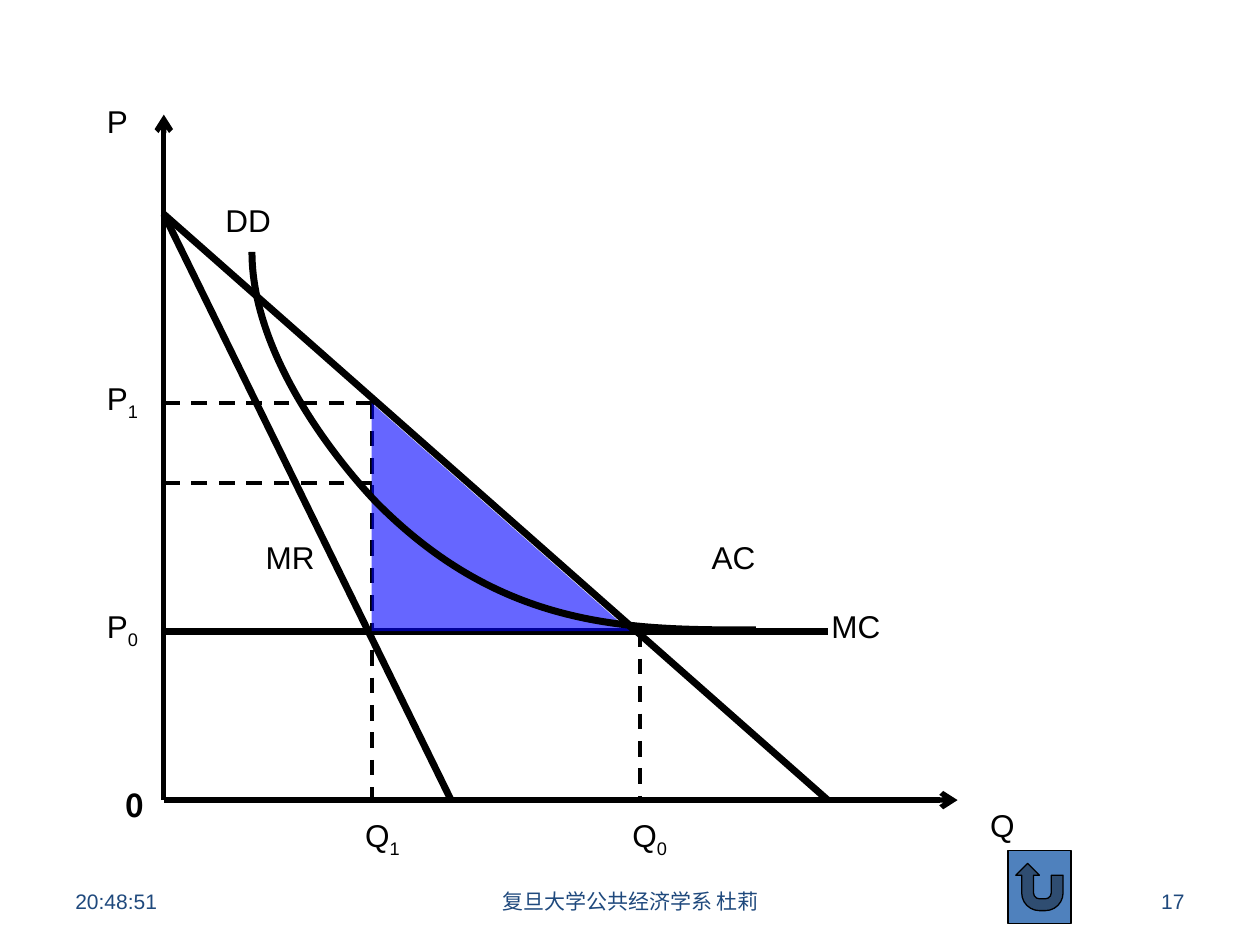
from pptx import Presentation
from pptx.dml.color import RGBColor
from pptx.enum.dml import MSO_LINE
from pptx.enum.shapes import MSO_SHAPE
from pptx.enum.text import MSO_ANCHOR, MSO_AUTO_SIZE, PP_ALIGN
from pptx.oxml.ns import qn
from pptx.util import Inches, Pt
from lxml.etree import SubElement

COLORS = {"ink": "000000", "loss": "0000FF", "button": "4F81BD", "footer": "1F497D"}
LATIN, CJK = "Arial", "Noto Sans CJK SC"


def rgb(name):
    return RGBColor.from_string(COLORS[name])


class Diagram:
    """Holds the slide and the common style of its elements."""

    label_format = {"size": Pt(18), "name": LATIN, "bold": False}
    footer_format = {"size": Pt(12), "name": LATIN, "bold": False}

    def __init__(self, slide):
        self.slide = slide
        self.shapes = slide.shapes

    def outline(self, line, width):
        line.color.rgb = rgb("ink")
        line.width = Pt(width)

    def line(self, start, end, width=4, dashed=False, arrow=False):
        connector = self.shapes.add_connector(1, *map(Inches, start + end))
        self.outline(connector.line, width)
        if dashed:
            connector.line.dash_style = MSO_LINE.DASH
        properties = connector._element.spPr
        if arrow:
            SubElement(properties.find(qn("a:ln")), qn("a:tailEnd"), type="arrow")
        SubElement(properties, qn("a:effectLst"))

    def run(self, paragraph, text, formats, color, subscript=False):
        run = paragraph.add_run()
        run.text = text
        for attribute, value in formats.items():
            setattr(run.font, attribute, value)
        run.font.color.rgb = rgb(color)
        properties = run._r.get_or_add_rPr()
        SubElement(properties, qn("a:ea"), typeface=CJK)
        if subscript:
            properties.set("baseline", "-25000")

    def text_frame(self, left, top, width):
        frame = self.shapes.add_textbox(*map(Inches, (left, top, width, 0.4))).text_frame
        frame.word_wrap = True
        return frame

    def label(self, left, top, width, text, subscript="", **changes):
        frame = self.text_frame(left, top, width)
        frame.auto_size = MSO_AUTO_SIZE.SHAPE_TO_FIT_TEXT
        formats = self.label_format | changes
        self.run(frame.paragraphs[0], text, formats, "ink")
        if subscript:
            self.run(frame.paragraphs[0], subscript, formats, "ink", subscript=True)

    def footer(self, left, width, text, alignment):
        frame = self.text_frame(left, 6.95, width)
        frame.vertical_anchor = MSO_ANCHOR.MIDDLE
        frame.paragraphs[0].alignment = alignment
        self.run(frame.paragraphs[0], text, self.footer_format, "footer")

    def shape(self, kind, box, color):
        shape = self.shapes.add_shape(kind, *map(Inches, box))
        shape.shadow.inherit = False
        shape.fill.solid()
        shape.fill.fore_color.rgb = rgb(color)
        shape.line.fill.background()
        return shape

    def welfare_loss(self, box, opacity):
        triangle = self.shape(MSO_SHAPE.RIGHT_TRIANGLE, box, "loss")
        fill_color = triangle._element.spPr.find(".//" + qn("a:srgbClr"))
        SubElement(fill_color, qn("a:alpha"), val=str(opacity * 1000))

    def return_button(self, box):
        button = self.shape(MSO_SHAPE.ACTION_BUTTON_RETURN, box, "button")
        self.outline(button.line, 0.75)
        button._element.spPr.find(qn("a:xfrm")).set("flipH", "1")

    def curve(self, start, points):
        """Draw Bezier segments; every three points are two controls and an end."""
        builder = self.shapes.build_freeform(*start, scale=Inches(1))
        builder.add_line_segments(points, close=False)
        curve = builder.convert_to_shape()
        curve.shadow.inherit = False
        curve.fill.background()
        self.outline(curve.line, 4)
        outline_path = curve._element.spPr.find(".//" + qn("a:path"))
        segments = outline_path.findall(qn("a:lnTo"))
        for first in range(0, len(segments), 3):
            bezier = SubElement(outline_path, qn("a:cubicBezTo"))
            for segment in segments[first:first + 3]:
                bezier.append(segment[0])
                outline_path.remove(segment)


def main():
    presentation = Presentation()
    presentation.slide_width, presentation.slide_height = Inches(10), Inches(7.5)
    diagram = Diagram(presentation.slides.add_slide(presentation.slide_layouts[6]))

    axis_x, axis_y = 1.3, 6.35
    q1, q0, demand_end = 2.95, 5.08, 6.57
    p1, average_cost, p0 = 3.2, 3.83, 5.01
    origin, intercept = (axis_x, axis_y), (axis_x, 1.7)

    for axis_end in ((7.6, axis_y), (axis_x, 0.91)):
        diagram.line(origin, axis_end, width=3, arrow=True)
    for start, end in (
        (intercept, (demand_end, axis_y)),
        (intercept, (3.58, axis_y)),
        ((axis_x, p0), (demand_end, p0)),
    ):
        diagram.line(start, end)
    for start, end in (
        ((q1, p1), (q1, axis_y)),
        ((q0, p0), (q0, axis_y)),
        ((q1, p1), (axis_x, p1)),
        ((q1, average_cost), (axis_x, average_cost)),
    ):
        diagram.line(start, end, width=2.25, dashed=True)

    diagram.label(0.9, 6.19, 0.39, "0", name=CJK, bold=True)
    for label in (
        (7.76, 6.35, 1.1, "Q"),
        (0.75, 0.76, 0.31, "P"),
        (6.5, 4.77, 0.87, "MC"),
        (1.69, 1.55, 0.71, "DD"),
        (0.75, 2.96, 0.47, "P", "1"),
        (2.01, 4.22, 0.79, "MR"),
        (2.8, 6.43, 0.71, "Q", "1"),
        (4.92, 6.43, 0.71, "Q", "0"),
        (5.55, 4.22, 0.79, "AC"),
        (0.75, 4.77, 0.63, "P", "0"),
    ):
        diagram.label(*label)

    diagram.welfare_loss((q1, p1, 2.05, p0 - p1), opacity=60)
    diagram.curve((2.18, 2.02), [(2.5, 2.91), (2.82, 3.8), (3.42, 4.26),
                                 (4.03, 4.71), (5.42, 4.66), (5.8, 4.73)])
    diagram.return_button((8, 6.75, 0.5, 0.58))

    diagram.footer(0.5, 2.33, "20:48:51", PP_ALIGN.LEFT)
    diagram.footer(3.42, 3.17, "复旦大学公共经济学系 杜莉", PP_ALIGN.CENTER)
    diagram.footer(7.17, 2.33, "17", PP_ALIGN.RIGHT)
    presentation.save("out.pptx")


if __name__ == "__main__":
    main()
